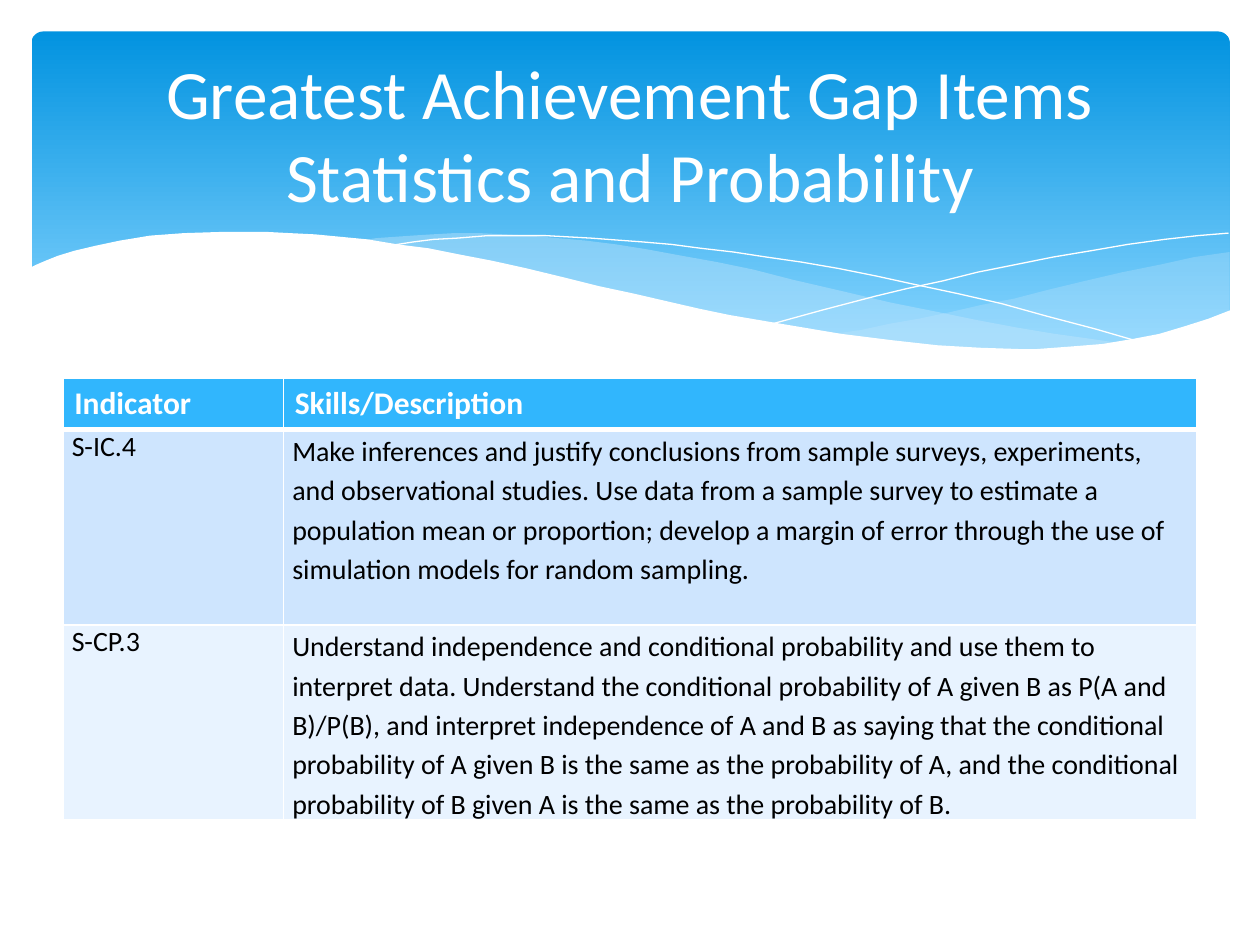
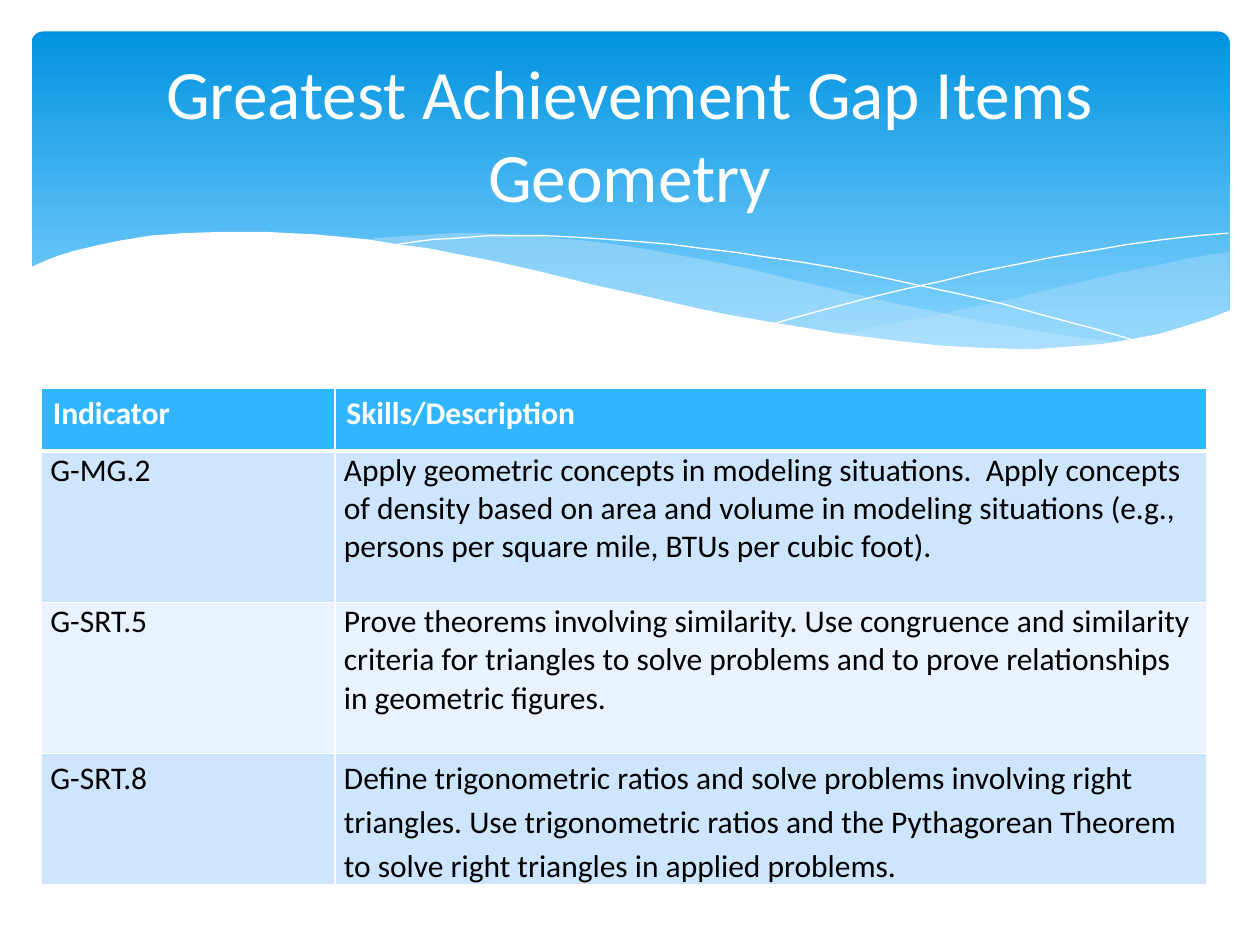
from lxml import etree
from pptx import Presentation
from pptx.dml.color import RGBColor
from pptx.enum.shapes import MSO_SHAPE
from pptx.enum.text import MSO_ANCHOR, PP_ALIGN
from pptx.oxml.ns import qn
from pptx.util import Inches, Pt

ROUND_RECT = MSO_SHAPE.ROUNDED_RECTANGLE
CENTER, LEFT = PP_ALIGN.CENTER, PP_ALIGN.LEFT
MIDDLE, TOP = MSO_ANCHOR.MIDDLE, MSO_ANCHOR.TOP

# Content: each body row is (indicator, description, spacing of each column)
HEADER = ("Indicator", "Skills/Description")
TITLE_START = "Greatest Achievement Gap Items"
SLIDES = [
    {
        "topic": "Statistics and Probability",
        "at": (0.5, 3), "cols": (1.75, 7.25), "heights": (0.41, 1.55, 1.55), "size": 16,
        "rows": [
            ("S-IC.4",
             "Make inferences and justify conclusions from sample surveys, experiments, and "
             "observational studies. Use data from a sample survey to estimate a population mean "
             "or proportion; develop a margin of error through the use of simulation models for "
             "random sampling.", (1, 1.15)),
            ("S-CP.3",
             "Understand independence and conditional probability and use them to interpret data. "
             "Understand the conditional probability of A given B as P(A and B)/P(B), and "
             "interpret independence of A and B as saying that the conditional probability of A "
             "given B is the same as the probability of A, and the conditional probability of B "
             "given A is the same as the probability of B.", (1, 1.15)),
        ],
    },
    {
        "topic": "Geometry",
        "at": (0.33, 3.08), "cols": (2.33, 6.92), "heights": (0.5, 1.2, 1.2, 1.04), "size": 18,
        "rows": [
            ("G-MG.2",
             "Apply geometric concepts in modeling situations.  Apply concepts of density based "
             "on area and volume in modeling situations (e.g., persons per square mile, BTUs per "
             "cubic foot).", (1, 1)),
            ("G-SRT.5",
             "Prove theorems involving similarity. Use congruence and similarity criteria for "
             "triangles to solve problems and to prove relationships in geometric figures.",
             (1, 1)),
            ("G-SRT.8",
             "Define trigonometric ratios and solve problems involving right triangles. Use "
             "trigonometric ratios and the Pythagorean Theorem to solve right triangles in "
             "applied problems.", (1.15, 1.15)),
        ],
    },
]

# Shared look
FONT = "Calibri"
WHITE, BLACK = "FFFFFF", "000000"
BAND_TOP, BAND_BOTTOM, WAVE = "0293E0", "83D3FE", "C6E7FC"
HEADER_FILL, ROW_FILLS = "31B6FD", ("CEE5FE", "E8F3FF")

# Wave outlines in inches
RIGHT_WAVE = [
    (9.76, 2), (9.48, 2.04), (9.21, 2.1), (8.91, 2.16), (8.61, 2.23), (8.32, 2.3), (8.05, 2.37),
    (7.79, 2.42), (7.53, 2.48), (7.29, 2.53), (7.06, 2.57), (6.83, 2.62), (6.61, 2.65),
    (6.91, 2.69), (7.19, 2.72), (7.45, 2.75), (7.69, 2.77), (8.03, 2.78), (8.35, 2.77),
    (8.63, 2.75), (8.89, 2.72), (9.13, 2.67), (9.35, 2.62), (9.49, 2.57), (9.63, 2.52),
    (9.76, 2.47)]
LEFT_WAVE = [
    (8.93, 2.73), (8.66, 2.69), (8.37, 2.65), (8.07, 2.6), (7.75, 2.54), (7.41, 2.47),
    (7.06, 2.4), (6.68, 2.31), (6.29, 2.22), (5.98, 2.14), (5.69, 2.08), (5.41, 2.03),
    (5.14, 1.98), (4.89, 1.94), (4.65, 1.91), (4.42, 1.89), (4.2, 1.87), (3.99, 1.86),
    (3.8, 1.85), (3.61, 1.85), (3.44, 1.86), (3.28, 1.87), (2.99, 1.89), (2.86, 1.91),
    (3.23, 1.96), (3.62, 2.03), (4.04, 2.11), (4.49, 2.22), (4.91, 2.32), (5.3, 2.4),
    (5.66, 2.48), (6.01, 2.55), (6.34, 2.61), (6.65, 2.66), (6.95, 2.7), (7.22, 2.74),
    (7.48, 2.76), (7.73, 2.77), (7.96, 2.78), (8.28, 2.78), (8.57, 2.77), (8.76, 2.75)]
FALLING_LINE = [
    (3.09, 1.95), (3.28, 1.92), (3.44, 1.9), (3.63, 1.89), (3.87, 1.87), (4.16, 1.87),
    (4.33, 1.87), (4.69, 1.89), (5.1, 1.92), (5.33, 1.94), (5.56, 1.97), (5.82, 2),
    (6.08, 2.04), (6.36, 2.08), (6.65, 2.13), (6.95, 2.19), (7.27, 2.26), (7.6, 2.33),
    (7.95, 2.41), (8.31, 2.51), (8.69, 2.61), (9.07, 2.72)]
RISING_LINE = [
    (6.13, 2.57), (6.53, 2.46), (6.95, 2.35), (7.2, 2.29), (7.48, 2.23), (7.76, 2.16),
    (8.06, 2.1), (8.36, 2.04), (8.66, 1.99), (8.95, 1.94), (9.24, 1.9), (9.51, 1.87),
    (9.75, 1.85)]
WHITE_WAVE = [
    (9.77, 2.46), (9.59, 2.53), (9.4, 2.59), (9.2, 2.65), (8.99, 2.69), (8.75, 2.73),
    (8.5, 2.75), (8.23, 2.77), (8.09, 2.77), (7.78, 2.76), (7.44, 2.74), (7.08, 2.7),
    (6.68, 2.65), (6.26, 2.58), (5.79, 2.5), (5.55, 2.45), (5.29, 2.39), (5.03, 2.33),
    (4.75, 2.27), (4.47, 2.2), (4.18, 2.13), (3.91, 2.07), (3.65, 2.02), (3.4, 1.97),
    (3.16, 1.94), (2.92, 1.9), (2.71, 1.88), (2.5, 1.86), (2.3, 1.85), (2.11, 1.84),
    (1.77, 1.84), (1.46, 1.85), (1.19, 1.87), (0.95, 1.91), (0.76, 1.95), (0.59, 1.99),
    (0.46, 2.03), (0.36, 2.07), (0.29, 2.1), (0.23, 2.13), (0.23, 3.29), (9.77, 3.29)]


def rgb(color):
    return RGBColor.from_string(color)


def write(tf, text, size=18, color=BLACK, bold=False, align=LEFT, spacing=1):
    """Fill a text frame; a newline becomes a line break."""
    tf.word_wrap = True
    p = tf.paragraphs[0]
    p.alignment, p.line_spacing = align, spacing
    for i, line in enumerate(text.split("\n")):
        if i:
            p.add_line_break()
        r = p.add_run()
        r.text = line
        r.font.name, r.font.size, r.font.bold = FONT, Pt(size), bold
        r.font.color.rgb = rgb(color)


def add_curve(s, points, fill=None, opacity=100, line=None):
    points = [(Inches(x), Inches(y)) for x, y in points]
    builder = s.shapes.build_freeform(*points[0])
    builder.add_line_segments(points[1:], close=fill is not None)
    sp = builder.convert_to_shape()
    sp.shadow.inherit = False
    if fill:
        sp.fill.solid()
        sp.fill.fore_color.rgb = rgb(fill)
        if opacity < 100:
            color = sp.fill._xPr.find(qn("a:solidFill"))[0]
            etree.SubElement(color, qn("a:alpha"), val=str(opacity * 1000))
    else:
        sp.fill.background()
    if line:
        sp.line.color.rgb = rgb(line)
        sp.line.width = Pt(0)
    else:
        sp.line.fill.background()


def add_banner(s, title):
    # Gradient band
    sp = s.shapes.add_shape(ROUND_RECT, Inches(0.25), Inches(0.25), Inches(9.51), Inches(2.7))
    sp.adjustments[0] = 0.034
    sp.shadow.inherit = False
    sp.line.fill.background()
    sp.fill.gradient()
    sp.fill.gradient_angle = 270
    stops = zip(sp.fill.gradient_stops, (0, 0.9), (BAND_TOP, BAND_BOTTOM))
    for stop, position, color in stops:
        stop.position = position
        stop.color.rgb = rgb(color)
    # Waves
    add_curve(s, RIGHT_WAVE, fill=WAVE, opacity=29)
    add_curve(s, LEFT_WAVE, fill=WAVE, opacity=40)
    add_curve(s, FALLING_LINE, line=WHITE)
    add_curve(s, RISING_LINE, line=WHITE)
    add_curve(s, WHITE_WAVE, fill=WHITE)
    # Title
    tf = s.shapes.add_textbox(Inches(0.5), Inches(0.37), Inches(9), Inches(1.37)).text_frame
    tf.vertical_anchor = MIDDLE
    write(tf, title, size=39.6, color=WHITE, align=CENTER)


def set_borders(cell, **widths):
    """Draw white cell borders, with widths in points keyed by side."""
    tc_pr = cell._tc.get_or_add_tcPr()
    for i, side in enumerate("LRTB"):
        ln = etree.Element(qn("a:ln" + side), w=str(Pt(widths.get(side, 1))))
        fill = etree.SubElement(ln, qn("a:solidFill"))
        etree.SubElement(fill, qn("a:srgbClr"), val=WHITE)
        tc_pr.insert(i, ln)


def fill_cell(cell, text, fill, margins, borders, **text_format):
    cell.fill.solid()
    cell.fill.fore_color.rgb = rgb(fill)
    cell.vertical_anchor = TOP
    cell.margin_left = cell.margin_right = Inches(margins[0])
    cell.margin_top = cell.margin_bottom = Inches(margins[1])
    set_borders(cell, **borders)
    write(cell.text_frame, text, **text_format)


def add_indicator_table(s, at, cols, heights, rows, size):
    left, top = at
    table = s.shapes.add_table(len(heights), len(cols), Inches(left), Inches(top),
                               Inches(sum(cols)), Inches(sum(heights))).table
    table.first_row = table.horz_banding = False
    for column, width in zip(table.columns, cols):
        column.width = Inches(width)
    for row, height in zip(table.rows, heights):
        row.height = Inches(height)
    # Header row
    for c, text in enumerate(HEADER):
        fill_cell(table.cell(0, c), text, HEADER_FILL, (0.09, 0.05), {"B": 3},
                  color=WHITE, bold=True)
    # Body rows
    for i, (*texts, spacings) in enumerate(rows):
        borders = {} if i else {"T": 3}
        for c, (text, spacing) in enumerate(zip(texts, spacings)):
            fill_cell(table.cell(i + 1, c), text, ROW_FILLS[i % 2], (0.07, 0), borders,
                      size=size, spacing=spacing)


def main():
    prs = Presentation()
    prs.slide_width, prs.slide_height = Inches(10), Inches(7.5)
    for content in SLIDES:
        s = prs.slides.add_slide(prs.slide_layouts[6])
        add_banner(s, f"{TITLE_START}\n{content['topic']}")
        add_indicator_table(s, content["at"], content["cols"], content["heights"],
                            content["rows"], content["size"])
    prs.save("out.pptx")


if __name__ == "__main__":
    main()
